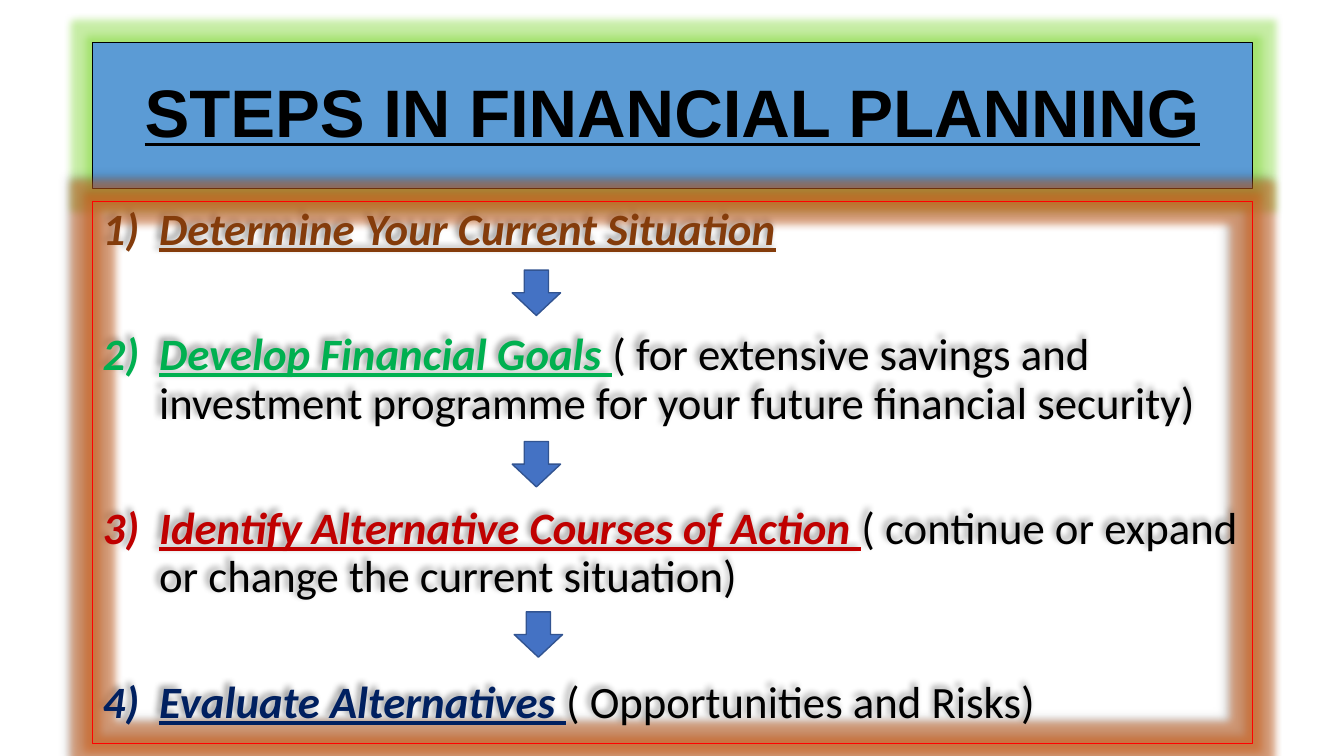
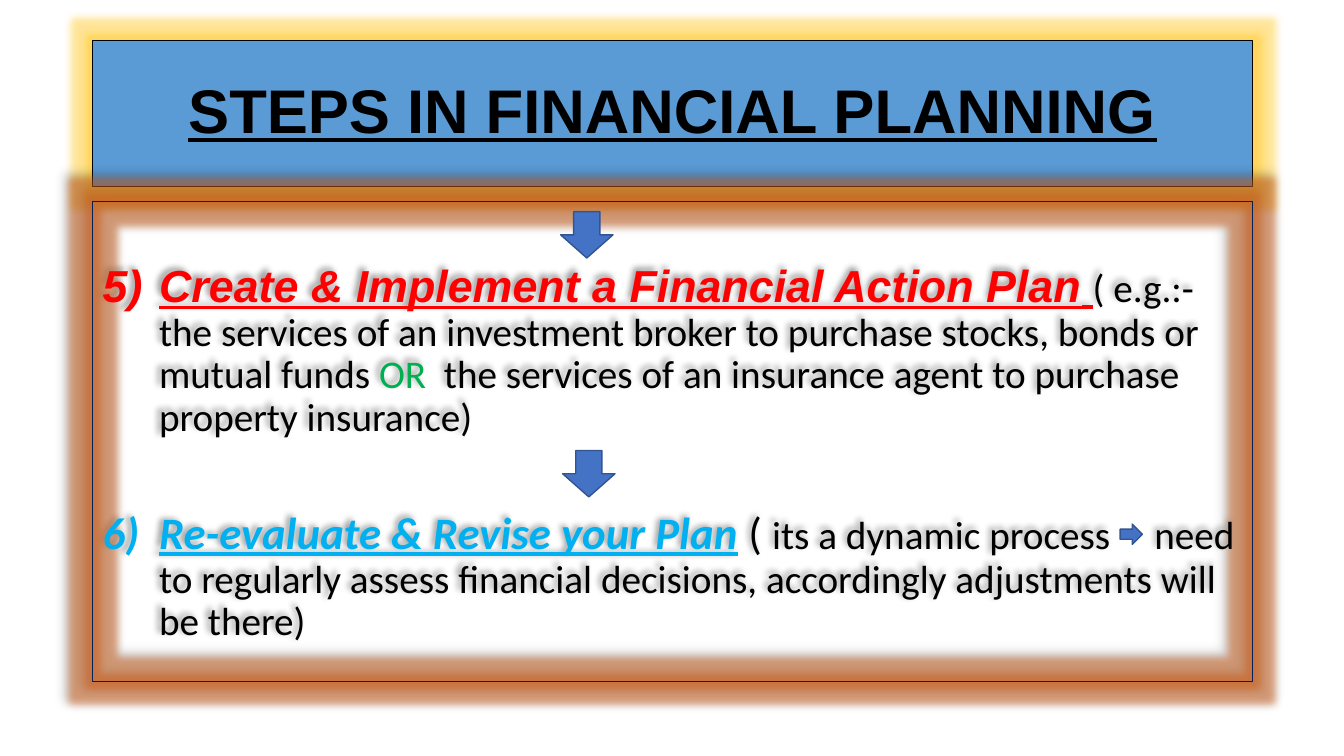
from lxml import etree
from pptx import Presentation
from pptx import util as u
from pptx.dml.color import RGBColor
from pptx.enum import shapes, text
from pptx.oxml import ns

BLACK, GREEN = "000000", "00B050"
SHAPE = shapes.MSO_SHAPE


def rgb(value):
    return RGBColor.from_string(value)


def add_xml(parent, tag, **attrs):
    return etree.SubElement(parent, ns.qn(tag), {k: str(v) for k, v in attrs.items()})


def heading(words, color, font="Calibri"):
    return words, 32, color, font, True


def note(words, size=32, color=BLACK):
    return words, size, color, "Calibri", False


class Deck:
    """Holds the style of the deck and the slide being built."""

    left, width = 0.92, 11.5
    band, arrow_fill, arrow_line = "5B9BD5", "4472C4", "325491"
    body_glow = "D2601A"

    def __init__(self):
        self.prs = Presentation()
        self.prs.slide_width = u.Inches(13.33)
        self.prs.slide_height = u.Inches(7.5)

    def new_slide(self):
        self.s = self.prs.slides.add_slide(self.prs.slide_layouts[6])

    def shape(self, kind, x, y, w, h, fill, line, weight):
        sp = self.s.shapes.add_shape(kind, *(u.Inches(v) for v in (x, y, w, h)))
        sp.shadow.inherit = False
        if fill:
            sp.fill.solid()
            sp.fill.fore_color.rgb = rgb(fill)
        else:
            sp.fill.background()
        sp.line.color.rgb = rgb(line)
        sp.line.width = u.Pt(weight)
        return sp

    def effect(self, sp, tag, color, alpha, **attrs):
        effects = sp.element.spPr.find(ns.qn("a:effectLst"))
        clr = add_xml(add_xml(effects, tag, **attrs), "a:srgbClr", val=color)
        add_xml(clr, "a:alpha", val=alpha * 1000)

    def glow(self, sp, color, alpha):
        self.effect(sp, "a:glow", color, alpha, rad=u.Pt(11))

    def title(self, words, top, size, glow):
        sp = self.shape(SHAPE.RECTANGLE, self.left, top, self.width, 1.45,
                        self.band, BLACK, 0.75)
        self.glow(sp, glow, 40)
        tf = sp.text_frame
        tf.vertical_anchor = text.MSO_ANCHOR.MIDDLE
        p = tf.paragraphs[0]
        p.text = words
        p.alignment = text.PP_ALIGN.CENTER
        p.line_spacing = 0.9
        p.font.name, p.font.size = "Arial", u.Pt(size)
        p.font.bold = p.font.underline = True
        p.font.color.rgb = rgb(BLACK)

    def steps(self, items, height, line, gap, start=1, inset=0.05):
        sp = self.shape(SHAPE.RECTANGLE, self.left, 2, self.width, height,
                        None, line, 0.75)
        self.glow(sp, self.body_glow, 50)
        self.effect(sp, "a:outerShdw", BLACK, 40, blurRad=u.Pt(4), dist=u.Pt(3),
                    dir=225 * 60000, algn="br", rotWithShape=0)
        tf = sp.text_frame
        tf.vertical_anchor = text.MSO_ANCHOR.TOP
        tf.margin_top = u.Inches(inset)
        for i, runs in enumerate(items):
            p = tf.add_paragraph() if i else tf.paragraphs[0]
            p.alignment = text.PP_ALIGN.LEFT
            p.line_spacing = 0.9
            p.space_before = u.Pt(gap if i else 0)
            pPr = p._p.get_or_add_pPr()
            pPr.set("marL", str(u.Inches(0.56)))
            pPr.set("indent", str(u.Inches(-0.56)))
            add_xml(pPr, "a:buAutoNum", type="arabicParenR", startAt=start)
            for run in runs:
                self.run(p, *run)
        return tf

    def run(self, p, words, size, color, font, strong):
        r = p.add_run()
        r.text = words
        r.font.name, r.font.size = font, u.Pt(size)
        r.font.bold = r.font.italic = r.font.underline = strong
        r.font.color.rgb = rgb(color)

    def widen(self, r, points):
        r.font._element.set("spc", str(round(points * 100)))

    def arrow(self, x, y, w, h, kind=SHAPE.DOWN_ARROW):
        self.shape(kind, x, y, w, h, self.arrow_fill, self.arrow_line, 1)


def main():
    deck = Deck()
    topic = "STEPS IN FINANCIAL PLANNING"

    deck.new_slide()
    deck.title(topic, 0.42, 48, "73D321")
    deck.steps([
        [heading("Determine Your Current Situation", "843C0B")],
        [heading("Develop Financial Goals ", GREEN),
         note("( for extensive savings and investment programme for your "
              "future financial security)")],
        [heading("Identify Alternative Courses of Action ", "C00000"),
         note("( continue or expand or change the current situation)")],
        [heading("Evaluate Alternatives ", "002060"),
         note("( Opportunities and Risks)")],
    ], 5.38, "FF0000", gap=55)
    for x, y in ((5.08, 2.68), (5.08, 4.38), (5.1, 6.07)):
        deck.arrow(x, y, 0.48, 0.45)

    deck.new_slide()
    deck.title(topic, 0.4, 44, "FFC000")
    tf = deck.steps([
        [heading("Create & Implement a Financial Action Plan", "FF0000", "Arial"),
         heading(" ", "FF0000"),
         note("( e.g.:- the services of an investment broker to purchase "
              "stocks, bonds or mutual funds ", 28),
         note("OR", 28, GREEN),
         note("  the services of an insurance agent to purchase "
              "property insurance)", 28)],
        [heading("Re-evaluate & Revise your Plan", "00B0F0"),
         note(" ( "),
         note("its a dynamic process", 28),
         note(" ", 28),
         note("need to regularly assess financial decisions, accordingly "
              "adjustments will be there)", 28)],
    ], 4.76, "002060", gap=51, start=5, inset=0.62)
    deck.widen(tf.paragraphs[1].runs[3], 25.3)
    for x, y in ((5.56, 2.1), (5.58, 4.47)):
        deck.arrow(x, y, 0.52, 0.46)
    deck.arrow(11.11, 5.2, 0.22, 0.2, SHAPE.RIGHT_ARROW)

    deck.prs.save("out.pptx")


if __name__ == "__main__":
    main()
